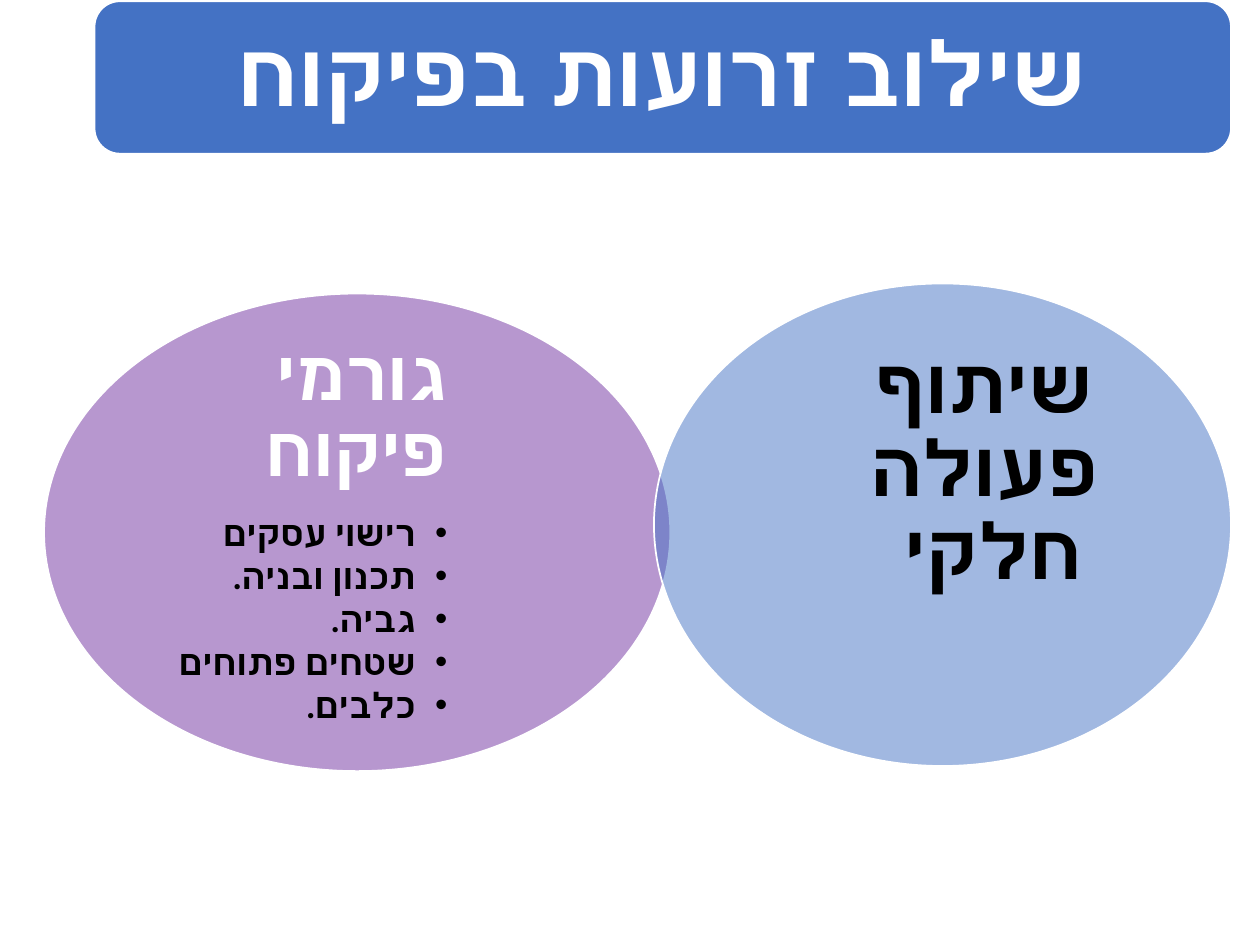
from dataclasses import dataclass

from lxml import etree
from pptx import Presentation
from pptx.dml.color import RGBColor
from pptx.enum.shapes import MSO_SHAPE
from pptx.enum.text import MSO_ANCHOR, MSO_AUTO_SIZE, PP_ALIGN
from pptx.oxml.ns import qn
from pptx.util import Inches, Pt

OVAL, ROUNDED = MSO_SHAPE.OVAL, MSO_SHAPE.ROUNDED_RECTANGLE
TOP, MIDDLE = MSO_ANCHOR.TOP, MSO_ANCHOR.MIDDLE
CENTER, RIGHT = PP_ALIGN.CENTER, PP_ALIGN.RIGHT
NO_FIT = MSO_AUTO_SIZE.NONE


@dataclass(frozen=True)
class Theme:
    """Font, colours and type sizes of the slide."""
    font: str = "Lato"
    blue: str = "4472C4"
    purple: str = "7030A0"
    white: str = "FFFFFF"
    black: str = "000000"
    title: int = 51
    partial: int = 44
    heading: int = 40
    item: int = 20


THEME = Theme()
SUPERVISORS = ["רישוי עסקים", "תכנון ובניה.", "גביה.", "שטחים פתוחים", "כלבים."]


def add_panel(page, kind, bounds, color, opacity=100):
    """Add a filled shape with a thin white outline."""
    panel = page.shapes.add_shape(kind, *map(Inches, bounds))
    panel.shadow.inherit = False
    panel.fill.solid()
    panel.fill.fore_color.rgb = RGBColor.from_string(color)
    panel.line.color.rgb = RGBColor.from_string(THEME.white)
    panel.line.width = Pt(1)
    if opacity < 100:
        fill = panel.fill._xPr.find(qn("a:solidFill"))
        etree.SubElement(fill[0], qn("a:alpha"), val=str(opacity * 1000))
    return panel


def place_text(box, bounds, anchor=MIDDLE, inset=0):
    """Position a text shape and return its prepared frame."""
    box.left, box.top, box.width, box.height = map(Inches, bounds)
    frame = box.text_frame
    frame.word_wrap = True
    frame.auto_size = NO_FIT
    frame.vertical_anchor = anchor
    frame.margin_left = frame.margin_right = Inches(inset)
    frame.margin_top = frame.margin_bottom = Inches(inset)
    return frame


def write(para, text, *, size, color, align=RIGHT, after=0.35, bullet=None):
    """Write a bold right-to-left paragraph, with a bullet if given."""
    para.alignment = align
    para.line_spacing = 0.9
    para.space_before = Pt(0)
    para.space_after = Pt(round(size * after))
    para.level = 1 if bullet else 0
    indent = Inches(0.25) if bullet else 0
    properties = para._p.get_or_add_pPr()
    properties.set("rtl", "1")
    properties.set("marL", str(indent))
    properties.set("indent", str(-indent))
    if bullet:
        etree.SubElement(properties, qn("a:buFont"), typeface="Arial")
        etree.SubElement(properties, qn("a:buChar"), char=bullet)
    else:
        etree.SubElement(properties, qn("a:buNone"))
    span = para.add_run()
    span.text = text
    span.font.name = THEME.font
    span.font.size = Pt(size)
    span.font.bold = True
    span.font.color.rgb = RGBColor.from_string(color)
    span.font._rPr.set("kern", "0")
    etree.SubElement(span.font._rPr, qn("a:cs"), typeface=THEME.font)


def add_banner(page):
    """Build the title on its rounded banner."""
    banner = add_panel(page, ROUNDED, (0.75, 0.01, 9.02, 1.21), THEME.blue)
    title = page.shapes.title
    banner._element.addnext(title._element)
    frame = place_text(title, (0.81, 0.07, 8.9, 1.09), inset=0.21)
    write(frame.paragraphs[0], "שילוב זרועות בפיקוח",
          size=THEME.title, color=THEME.white, align=CENTER)


def add_supervisors(page):
    """Build the left oval with its heading and list."""
    oval = add_panel(page, OVAL, (0.35, 2.33, 4.97, 3.79), THEME.purple, 50)
    body = page.placeholders[1]
    oval._element.addnext(body._element)
    frame = place_text(body, (1.05, 2.78, 2.86, 2.9))
    frame.margin_right = Inches(0.36)
    write(frame.paragraphs[0], "גורמי פיקוח",
          size=THEME.heading, color=THEME.white)
    for item in SUPERVISORS:
        write(frame.add_paragraph(), item, size=THEME.item,
              color=THEME.black, after=0.15, bullet="•")


def add_cooperation(page):
    """Build the right oval with its label."""
    add_panel(page, OVAL, (5.19, 2.25, 4.58, 3.83), THEME.blue, 50)
    bounds = (6.49, 2.75, 2.64, 2.89)
    box = page.shapes.add_textbox(*map(Inches, bounds))
    frame = place_text(box, bounds, anchor=TOP)
    write(frame.paragraphs[0], "שיתוף פעולה חלקי ",
          size=THEME.partial, color=THEME.black, align=CENTER)


def main():
    """Build and save the deck."""
    deck = Presentation()
    deck.slide_width, deck.slide_height = Inches(10), Inches(7.5)
    page = deck.slides.add_slide(deck.slide_layouts[1])
    add_banner(page)
    add_supervisors(page)
    add_cooperation(page)
    deck.save("out.pptx")


if __name__ == "__main__":
    main()
